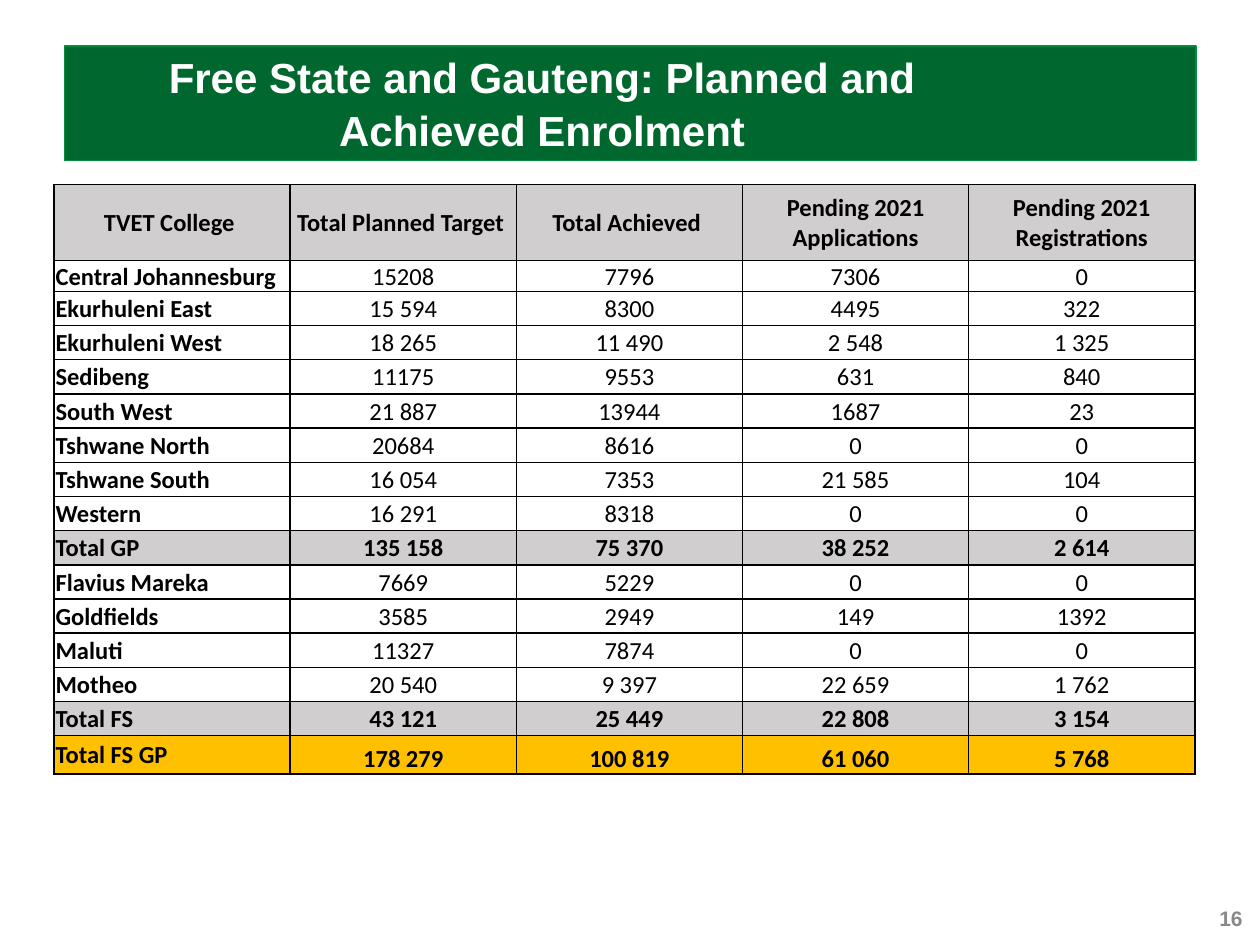
"""Build the Free State and Gauteng planned and achieved enrolment slide."""
from dataclasses import dataclass

from lxml import etree
from pptx import Presentation
from pptx.dml.color import RGBColor
from pptx.enum.shapes import MSO_SHAPE
from pptx.enum.text import MSO_ANCHOR, MSO_AUTO_SIZE, PP_ALIGN
from pptx.oxml.ns import qn
from pptx.util import Cm, Pt

RECTANGLE = MSO_SHAPE.RECTANGLE
TOP, MIDDLE, BOTTOM = MSO_ANCHOR.TOP, MSO_ANCHOR.MIDDLE, MSO_ANCHOR.BOTTOM
LEFT, CENTER, RIGHT, JUSTIFY = PP_ALIGN.LEFT, PP_ALIGN.CENTER, PP_ALIGN.RIGHT, PP_ALIGN.JUSTIFY
GROW = MSO_AUTO_SIZE.SHAPE_TO_FIT_TEXT


@dataclass(frozen=True)
class Theme:
    banner: str = "00682F"
    banner_line: str = "008E40"
    white: str = "FFFFFF"
    black: str = "000000"
    gray: str = "D0CECE"
    gold: str = "FFC000"
    page_number: str = "898989"
    heading_font: str = "Arial"
    table_font: str = "Calibri"
    title_size: int = 24
    table_size: int = 14
    page_number_size: int = 12


THEME = Theme()


@dataclass(frozen=True)
class Row:
    cells: tuple
    fill: str = THEME.white
    bold: bool = False
    height: float = 0.69
    first_align: PP_ALIGN = JUSTIFY
    value_anchor: MSO_ANCHOR = MIDDLE


def total(*cells: str) -> Row:
    return Row(cells, fill=THEME.gray, bold=True, first_align=LEFT)


ROWS = (
    Row(("TVET College ", "Total Planned Target ", "Total Achieved ",
         "Pending 2021 Applications", "Pending 2021 Registrations"),
        fill=THEME.gray, bold=True, height=1.53, first_align=CENTER),
    Row(("Central Johannesburg", "15208", "7796", "7306", "0"), height=0.62),
    Row(("Ekurhuleni East", "15 594", "8300", "4495", "322")),
    Row(("Ekurhuleni West", "18 265", "11 490", "2 548", "1 325")),
    Row(("Sedibeng", "11175", "9553", "631", "840")),
    Row(("South West", "21 887", "13944", "1687", "23")),
    Row(("Tshwane North", "20684", "8616", "0", "0")),
    Row(("Tshwane South", "16 054", "7353", "21 585", "104")),
    Row(("Western", "16 291", "8318", "0", "0")),
    total("Total GP", "135 158", "75 370", "38 252", "2 614"),
    Row(("Flavius Mareka", "7669", "5229", "0", "0")),
    Row(("Goldfields", "3585", "2949", "149", "1392")),
    Row(("Maluti", "11327", "7874", "0", "0")),
    Row(("Motheo", "20 540", "9 397", "22 659", "1 762")),
    total("Total FS", "43 121", "25 449", "22 808", "3 154"),
    Row(("Total FS GP", "178 279", "100 819", "61 060", "5 768"),
        fill=THEME.gold, bold=True, height=0.77, value_anchor=BOTTOM),
)
COLUMN_WIDTHS = (4.76, 4.56, 4.56, 4.56, 4.56)


def write_text(paragraph, text: str, *, size: int, font: str, color: str,
               bold: bool = True, align: PP_ALIGN = CENTER) -> None:
    paragraph.alignment = align
    run = paragraph.add_run()
    run.text = text
    run.font.size = Pt(size)
    run.font.name = font
    run.font.bold = bold
    run.font.color.rgb = RGBColor.from_string(color)


def add_banner(slide) -> None:
    banner = slide.shapes.add_shape(RECTANGLE, Cm(1.3), Cm(0.93), Cm(22.81), Cm(2.31))
    banner.shadow.inherit = False
    banner.fill.solid()
    banner.fill.fore_color.rgb = RGBColor.from_string(THEME.banner)
    banner.line.color.rgb = RGBColor.from_string(THEME.banner_line)
    banner.line.width = Pt(1)
    frame = banner.text_frame
    frame.word_wrap = True
    frame.auto_size = GROW
    frame.vertical_anchor = MIDDLE
    first, second = frame.paragraphs[0], frame.add_paragraph()
    for paragraph, text in ((first, "Free State and Gauteng: Planned and"),
                            (second, "Achieved Enrolment")):
        write_text(paragraph, text, size=THEME.title_size,
                   font=THEME.heading_font, color=THEME.white)
    first._p.get_or_add_pPr().set("marR", str(Cm(3.55)))
    second.space_before = Pt(1.5)


def add_borders(cell) -> None:
    properties = cell._tc.get_or_add_tcPr()
    for side in ("a:lnL", "a:lnR", "a:lnT", "a:lnB"):
        line = etree.SubElement(properties, qn(side), w=str(Pt(1)))
        fill = etree.SubElement(line, qn("a:solidFill"))
        etree.SubElement(fill, qn("a:srgbClr"), val=THEME.black)


def fill_cell(cell, text: str, row: Row, is_first: bool) -> None:
    cell.margin_left = cell.margin_right = cell.margin_top = Cm(0.03)
    cell.margin_bottom = Cm(0)
    cell.vertical_anchor = MIDDLE if is_first else row.value_anchor
    add_borders(cell)
    cell.fill.solid()
    cell.fill.fore_color.rgb = RGBColor.from_string(row.fill)
    write_text(cell.text_frame.paragraphs[0], text, size=THEME.table_size,
               font=THEME.table_font, color=THEME.black, bold=is_first or row.bold,
               align=row.first_align if is_first else CENTER)


def add_enrolment_table(slide) -> None:
    height = sum(row.height for row in ROWS)
    table = slide.shapes.add_table(len(ROWS), len(COLUMN_WIDTHS), Cm(1.09), Cm(3.72),
                                   Cm(sum(COLUMN_WIDTHS)), Cm(height)).table
    for column, width in zip(table.columns, COLUMN_WIDTHS):
        column.width = Cm(width)
    for table_row, row in zip(table.rows, ROWS):
        table_row.height = Cm(row.height)
        for index, (cell, text) in enumerate(zip(table_row.cells, row.cells)):
            fill_cell(cell, text, row, index == 0)


def add_page_number(slide) -> None:
    frame = slide.shapes.add_textbox(Cm(19.38), Cm(18.14), Cm(5.92), Cm(1.02)).text_frame
    frame.word_wrap = True
    frame.vertical_anchor = TOP
    write_text(frame.paragraphs[0], "16", size=THEME.page_number_size,
               font=THEME.heading_font, color=THEME.page_number, align=RIGHT)


def main() -> None:
    presentation = Presentation()
    presentation.slide_width, presentation.slide_height = Cm(25.4), Cm(19.05)
    slide = presentation.slides.add_slide(presentation.slide_layouts[6])
    add_page_number(slide)
    add_banner(slide)
    add_enrolment_table(slide)
    presentation.save("out.pptx")


if __name__ == "__main__":
    main()
